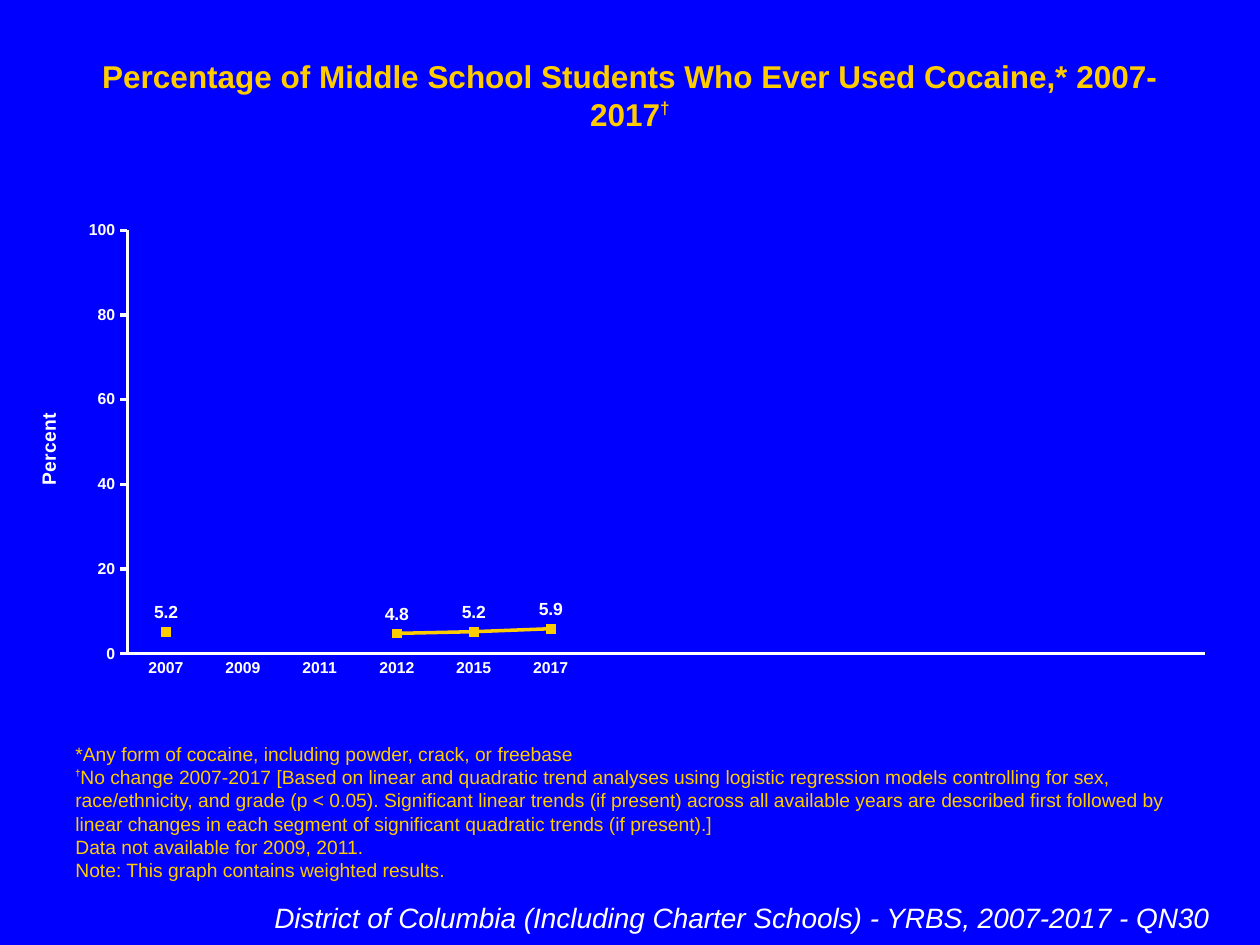
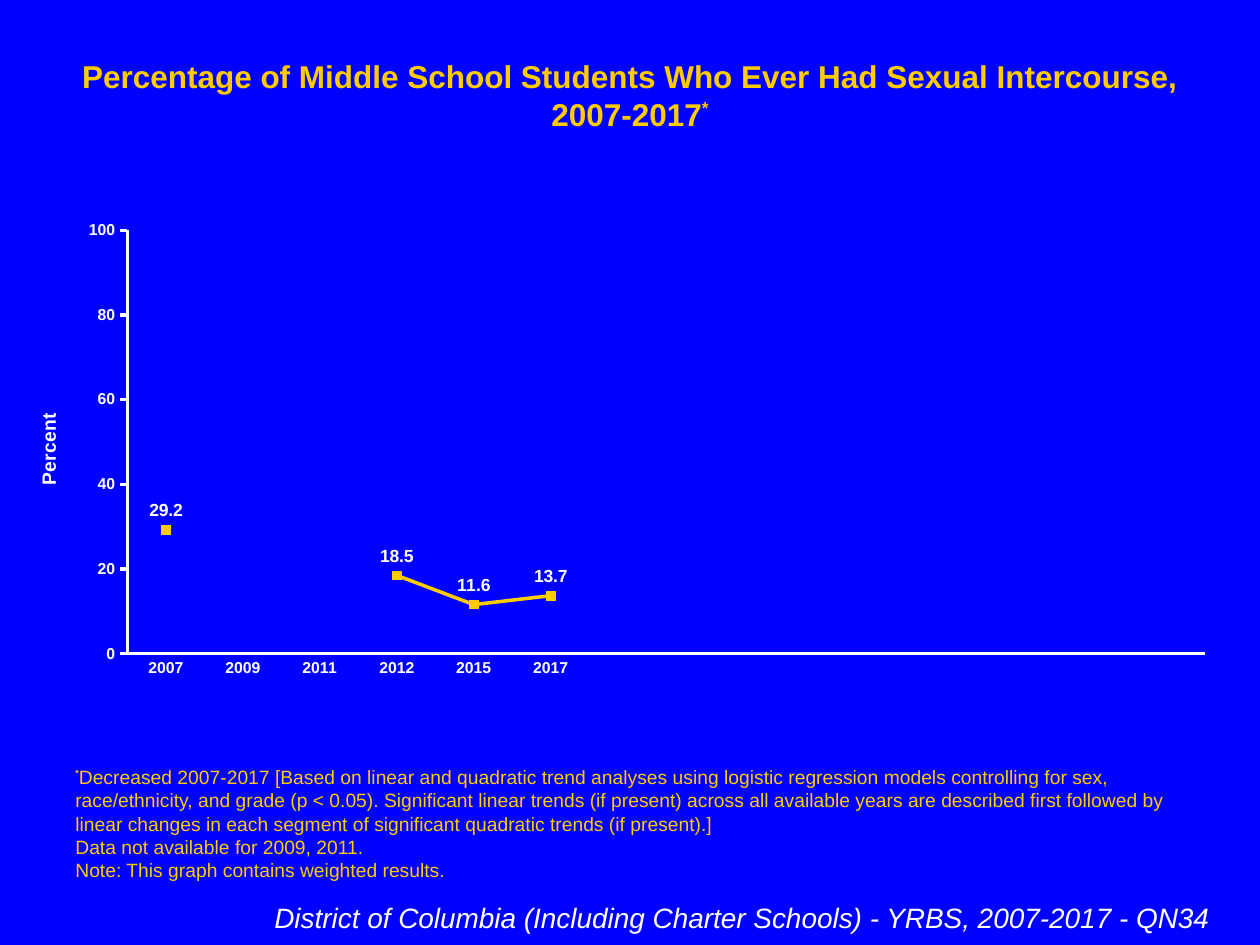
from lxml.etree import SubElement
from pptx import Presentation
from pptx.chart.data import CategoryChartData
from pptx.dml.color import RGBColor
from pptx.enum.chart import XL_CHART_TYPE, XL_LABEL_POSITION, XL_MARKER_STYLE, XL_TICK_MARK
from pptx.enum.text import MSO_ANCHOR, MSO_AUTO_SIZE, PP_ALIGN
from pptx.oxml.ns import qn
from pptx.util import Cm, Pt

BLUE = RGBColor(0x00, 0x00, 0xFF)
GOLD = RGBColor(0xFF, 0xCC, 0x00)
WHITE = RGBColor(0xFF, 0xFF, 0xFF)
FONT = "Arial"

YEARS = ["2007", "2009", "2011", "2012", "2015", "2017"]
CATEGORY_COUNT = 14
PLOT_AREA = {"x": 0.08, "y": 0.04, "w": 0.9, "h": 0.84}

TREND_METHOD = (
    " 2007-2017 [Based on linear and quadratic trend analyses using logistic regression models "
    "controlling for sex, race/ethnicity, and grade (p < 0.05). Significant linear trends "
    "(if present) across all available years are described first followed by linear changes "
    "in each segment of significant quadratic trends (if present).]"
)
CLOSING_NOTES = ["Data not available for 2009, 2011.", "Note: This graph contains weighted results."]


def style_font(font, size, color, bold=False, italic=False):
    font.name = FONT
    font.size = Pt(size)
    font.color.rgb = color
    font.bold = bold
    font.italic = italic


def add_box(page, left, top, width, height):
    box = page.shapes.add_textbox(Cm(left), Cm(top), Cm(width), Cm(height))
    box.text_frame.word_wrap = True
    box.text_frame.auto_size = MSO_AUTO_SIZE.SHAPE_TO_FIT_TEXT
    return box.text_frame


def add_raised_mark(para, mark, size, baseline, bold=True):
    """Add a superscript run; baseline is its rise in percent."""
    span = para.add_run()
    span.text = mark
    span.font.size = Pt(size)
    span.font.bold = bold
    span.font._element.set("baseline", str(baseline * 1000))


def add_title(page, title, mark):
    para = add_box(page, 1.27, 1.02, 22.86, 1.02).paragraphs[0]
    para.alignment = PP_ALIGN.CENTER
    style_font(para.font, 18, GOLD, bold=True)
    para.add_run().text = title
    add_raised_mark(para, mark, 17, 40)


def add_notes_text(page, mark, trend, definition):
    """Add the footnotes, which grow upwards from the footer."""
    frame = add_box(page, 1.27, 17.15, 22.86, 0.74)
    frame.vertical_anchor = MSO_ANCHOR.BOTTOM
    trend_line = trend + TREND_METHOD
    lines = ([definition] if definition else []) + [trend_line] + CLOSING_NOTES
    for index, line in enumerate(lines):
        para = frame.add_paragraph() if index else frame.paragraphs[0]
        style_font(para.font, 11, GOLD)
        if line == trend_line:
            add_raised_mark(para, mark, 9, 50)
        para.add_run().text = line


def add_footer(page, question):
    para = add_box(page, 0.64, 18.03, 24, 0.94).paragraphs[0]
    para.alignment = PP_ALIGN.RIGHT
    style_font(para.font, 16, WHITE, italic=True)
    para.add_run().text = (
        f"District of Columbia (Including Charter Schools) - YRBS, 2007-2017 - {question}"
    )


def set_plot_area(chart):
    """Fix the inner plot area as fractions of the chart."""
    plot_area = chart._chartSpace.chart.plotArea
    for old_layout in plot_area.findall(qn("c:layout")):
        plot_area.remove(old_layout)
    layout = SubElement(plot_area, qn("c:layout"))
    plot_area.insert(0, layout)
    manual = SubElement(layout, qn("c:manualLayout"))
    settings = {"layoutTarget": "inner", "xMode": "edge", "yMode": "edge", **PLOT_AREA}
    for name, value in settings.items():
        SubElement(manual, qn(f"c:{name}")).set("val", str(value))


def style_axis(axis, tick_mark):
    axis.has_major_gridlines = False
    axis.major_tick_mark = tick_mark
    axis.minor_tick_mark = XL_TICK_MARK.NONE
    axis.format.line.color.rgb = WHITE
    axis.format.line.width = Pt(2)
    style_font(axis.tick_labels.font, 9, WHITE, bold=True)


def style_value_axis(axis):
    style_axis(axis, XL_TICK_MARK.OUTSIDE)
    axis.minimum_scale = 0
    axis.maximum_scale = 100
    axis.major_unit = 20
    axis.tick_labels.number_format = "#,##0"
    axis.tick_labels.number_format_is_linked = False
    frame = axis.axis_title.text_frame
    frame.text = "Percent"
    style_font(frame.paragraphs[0].font, 11, WHITE, bold=True)
    frame._txBody.bodyPr.set("rot", "-5400000")
    frame._txBody.bodyPr.set("vert", "horz")


def style_series(series):
    series.smooth = False
    series.format.line.color.rgb = GOLD
    series.format.line.width = Pt(2)
    marker = series.marker
    marker.style = XL_MARKER_STYLE.SQUARE
    marker.size = 5
    marker.format.fill.solid()
    marker.format.fill.fore_color.rgb = GOLD
    marker.format.line.color.rgb = GOLD
    labels = series.data_labels
    labels.show_value = True
    labels.position = XL_LABEL_POSITION.ABOVE
    labels.number_format = "#,##0.0"
    labels.number_format_is_linked = False
    style_font(labels.font, 10, WHITE, bold=True)


def add_trend_chart(page, percents):
    spare = CATEGORY_COUNT - len(YEARS)
    data = CategoryChartData()
    data.categories = YEARS + [""] * spare
    data.add_series("Series 1", percents + [None] * spare)
    chart = page.shapes.add_chart(
        XL_CHART_TYPE.LINE_MARKERS, Cm(0.64), Cm(4.24), Cm(24.13), Cm(10.16), data
    ).chart
    chart.has_title = False
    chart.has_legend = False
    style_font(chart.font, 18, WHITE)
    chart.plots[0].vary_by_categories = False
    set_plot_area(chart)
    style_axis(chart.category_axis, XL_TICK_MARK.NONE)
    style_value_axis(chart.value_axis)
    style_series(chart.plots[0].series[0])


def add_trend_page(deck, title, mark, percents, trend, question, definition=None):
    page = deck.slides.add_slide(deck.slide_layouts[6])
    add_title(page, title, mark)
    add_notes_text(page, mark, trend, definition)
    add_footer(page, question)
    add_trend_chart(page, percents)


def main():
    deck = Presentation()
    deck.slide_width = Cm(25.4)
    deck.slide_height = Cm(19.05)
    background = deck.slide_master.background.fill
    background.solid()
    background.fore_color.rgb = BLUE

    add_trend_page(
        deck,
        "Percentage of Middle School Students Who Ever Used Cocaine,* 2007-2017",
        "†",
        [5.2, None, None, 4.8, 5.2, 5.9],
        "No change",
        "QN30",
        "*Any form of cocaine, including powder, crack, or freebase",
    )
    add_trend_page(
        deck,
        "Percentage of Middle School Students Who Ever Had Sexual Intercourse, 2007-2017",
        "*",
        [29.2, None, None, 18.5, 11.6, 13.7],
        "Decreased",
        "QN34",
    )
    deck.save("out.pptx")


if __name__ == "__main__":
    main()
